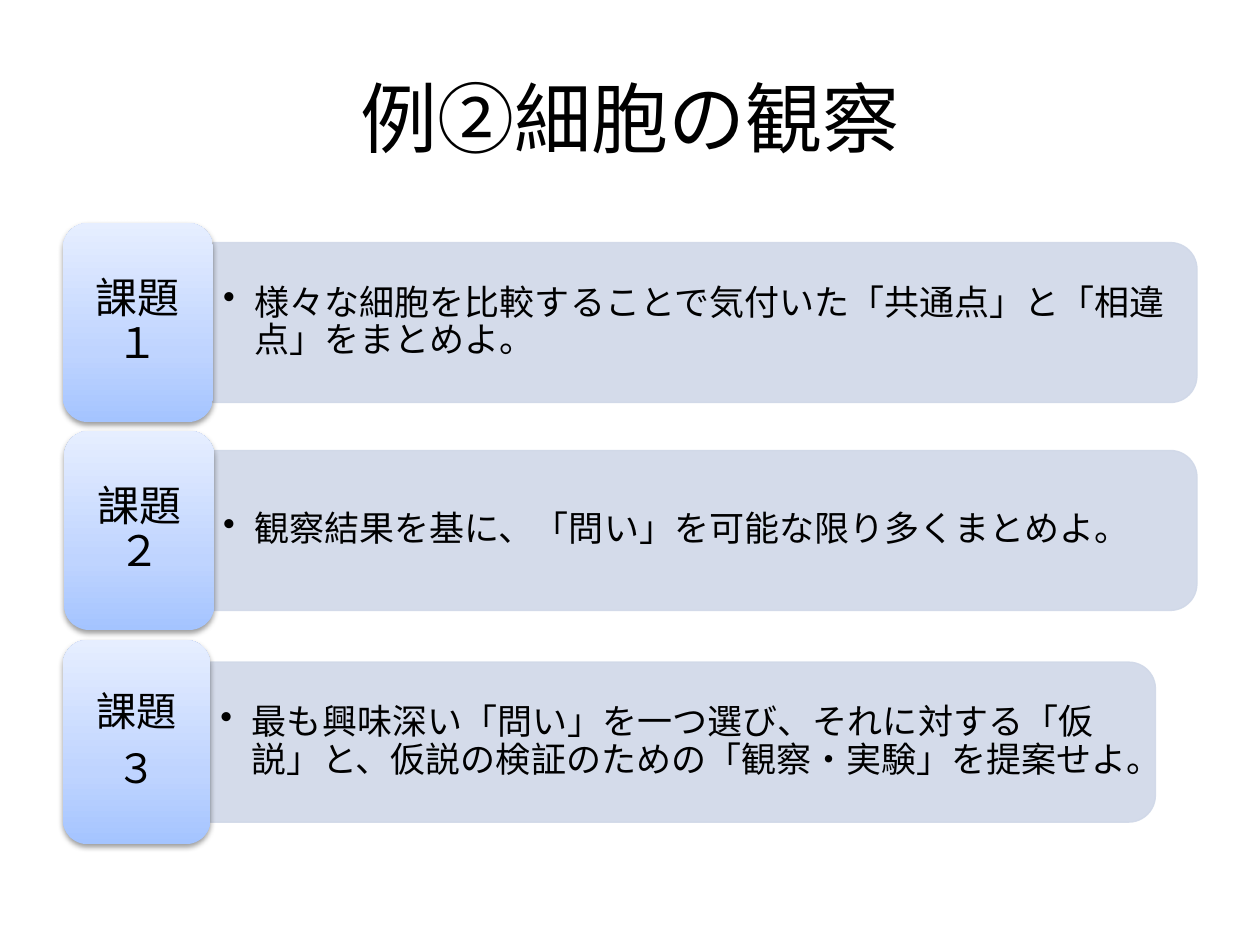
"""Build a slide with three observation tasks, each a label beside a rounded bar."""
from lxml.etree import SubElement
from pptx import Presentation
from pptx.dml.color import RGBColor
from pptx.enum.shapes import MSO_SHAPE
from pptx.enum.text import MSO_ANCHOR, PP_ALIGN
from pptx.oxml import parse_xml
from pptx.oxml.ns import nsdecls, qn
from pptx.util import Inches, Pt


def paint(fill, color, opacity=100):
    fill.solid()
    fill.fore_color.rgb = RGBColor.from_string(color)
    if opacity < 100:
        color_node = fill._xPr.find(qn("a:solidFill"))[0]
        SubElement(color_node, qn("a:alpha"), val=str(opacity * 1000))


def write(frame, text, size, align, after=None, bullet=False, inset=(0.1, 0.05)):
    frame.text = text
    frame.word_wrap = True
    frame.vertical_anchor = MSO_ANCHOR.MIDDLE
    frame.margin_left = frame.margin_right = Inches(inset[0])
    frame.margin_top = frame.margin_bottom = Inches(inset[1])
    for paragraph in frame.paragraphs:
        paragraph.alignment = align
        properties = paragraph._p.get_or_add_pPr()
        if after:
            paragraph.line_spacing = 0.9
            spacing = SubElement(properties, qn("a:spcAft"))
            SubElement(spacing, qn("a:spcPct"), val=str(after * 1000))
        if bullet:
            paragraph.level = 1
            properties.set("marL", str(Inches(0.25)))
            properties.set("indent", str(-Inches(0.25)))
            SubElement(properties, qn("a:buChar"), char="•")
        for run in paragraph.runs:
            run.font.size = Pt(size)
            run.font.name = "Roboto"
            paint(run.font.fill, "000000")


presentation = Presentation()
presentation.slide_width, presentation.slide_height = Inches(10), Inches(7.5)
slide = presentation.slides.add_slide(presentation.slide_layouts[5])
shapes = slide.shapes

heading = shapes.title
heading.left, heading.top = Inches(0.5), Inches(0.3)
heading.width, heading.height = Inches(9), Inches(1.25)
write(heading.text_frame, "例②細胞の観察", 44, PP_ALIGN.CENTER)

BAR_HEIGHT, BAR_TEXT_HEIGHT, LABEL_PAD = 1.27, 1.14, 0.06
GRADIENT = [(0, "A4C4FF"), (35, "BFD4FF"), (100, "E6EEFF")]
stops = "".join(
    f'<a:gs pos="{position * 1000}"><a:srgbClr val="{color}"/></a:gs>'
    for position, color in GRADIENT
)
gradient_xml = (
    f'<a:gradFill {nsdecls("a")} rotWithShape="1"><a:gsLst>{stops}</a:gsLst>'
    '<a:lin ang="16200000" scaled="0"/></a:gradFill>'
)
shadow_xml = (
    f'<a:effectLst {nsdecls("a")}><a:outerShdw blurRad="40000" dist="20000" '
    'dir="5400000" rotWithShape="0"><a:srgbClr val="000000">'
    '<a:alpha val="38000"/></a:srgbClr></a:outerShdw></a:effectLst>'
)

tasks = [
    ("課題１", 24, "様々な細胞を比較することで気付いた「共通点」と「相違点」をまとめよ。",
     2.56, 0.5, 1.19, 1.58, 7.81),
    ("課題２", 24, "観察結果を基に、「問い」を可能な限り多くまとめよ。",
     4.21, 0.51, 1.19, 1.58, 7.81),
    ("課題\n３", 23, "最も興味深い「問い」を一つ選び、それに対する「仮説」と、"
     "仮説の検証のための「観察・実験」を提案せよ。",
     5.89, 0.5, 1.17, 1.62, 7.5),
]

for name, name_size, task, middle, left, label_width, label_height, bar_length in tasks:
    bar_left = 0.5 + label_width
    bar = shapes.add_shape(
        MSO_SHAPE.ROUND_2_SAME_RECTANGLE,
        Inches(bar_left + (bar_length - BAR_HEIGHT) / 2),
        Inches(middle - bar_length / 2),
        Inches(BAR_HEIGHT), Inches(bar_length),
    )
    bar.rotation = 90
    bar.shadow.inherit = False
    paint(bar.fill, "D0D8E8", 90)
    paint(bar.line.fill, "D0D8E8", 90)
    bar.line.width = Pt(0.75)

    task_box = shapes.add_textbox(
        Inches(bar_left), Inches(middle - BAR_TEXT_HEIGHT / 2),
        Inches(bar_length - LABEL_PAD), Inches(BAR_TEXT_HEIGHT),
    )
    write(task_box.text_frame, task, 20, PP_ALIGN.LEFT, 15, True, (0.08, 0.04))

    label = shapes.add_shape(
        MSO_SHAPE.ROUNDED_RECTANGLE,
        Inches(left), Inches(middle - label_height / 2),
        Inches(label_width), Inches(label_height),
    )
    label.line.fill.background()
    label_properties = label._element.spPr
    label_properties.insert(2, parse_xml(gradient_xml))
    label_properties.append(parse_xml(shadow_xml))

    name_box = shapes.add_textbox(
        Inches(left + LABEL_PAD), Inches(middle - label_height / 2 + LABEL_PAD),
        Inches(label_width - 2 * LABEL_PAD), Inches(label_height - 2 * LABEL_PAD),
    )
    write(name_box.text_frame, name, name_size, PP_ALIGN.CENTER, 35)

presentation.save("out.pptx")
